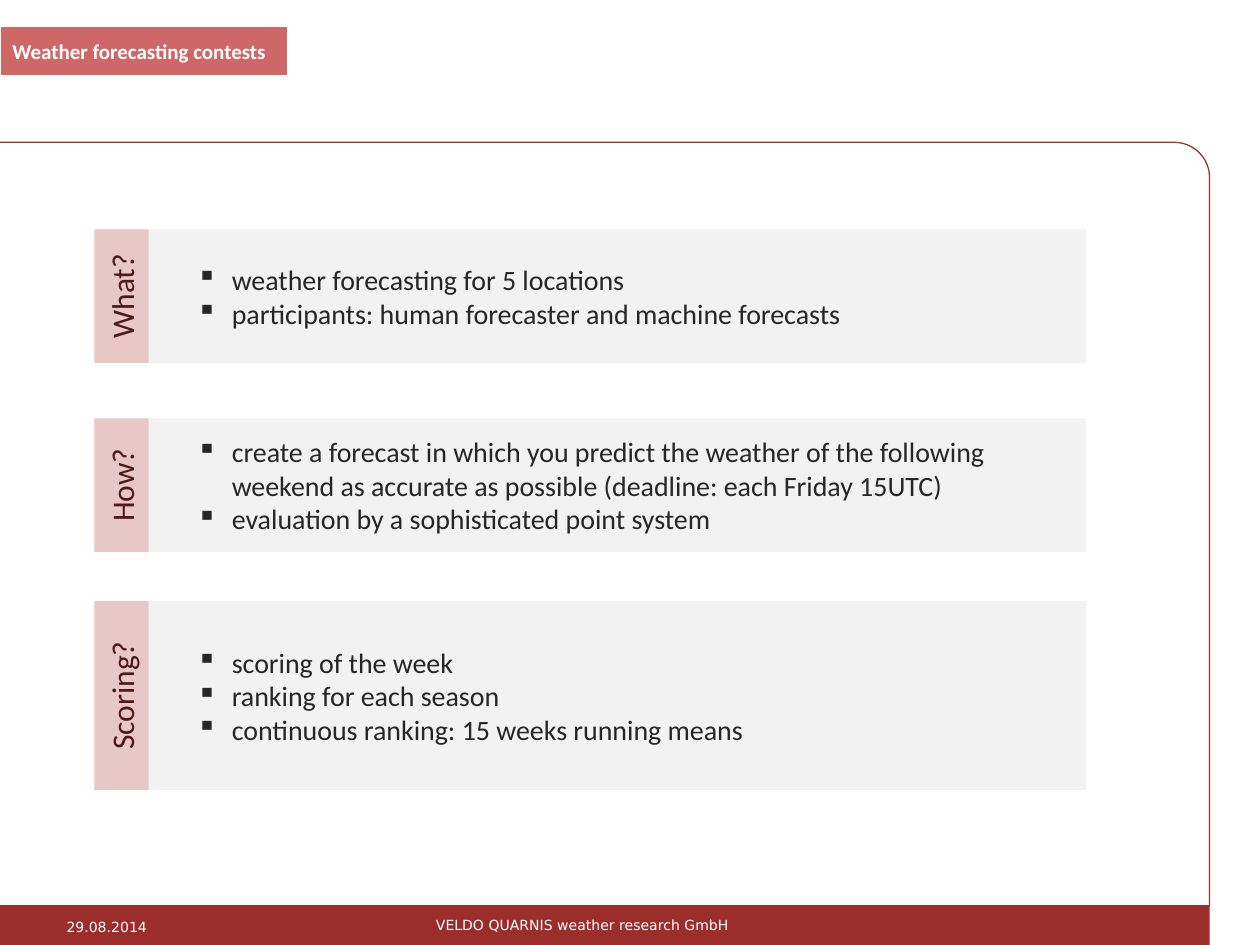
import math
from lxml import etree
from pptx import Presentation, util as u
from pptx.dml.color import RGBColor
from pptx.enum import shapes, text
from pptx.oxml import ns

# Content
TITLE = "Weather forecasting contests"
DATE = "29.08.2014"
FOOTER = "VELDO QUARNIS weather research GmbH"
SECTIONS = [  # label, top, height, bullets
    ("What?", 1.82, 1.06, [
        "weather forecasting for 5 locations",
        "participants: human forecaster and machine forecasts"]),
    ("How?", 3.32, 1.06, [
        "create a forecast in which you predict the weather of the following "
        "weekend as accurate as possible (deadline: each Friday 15UTC)",
        "evaluation by a sophisticated point system"]),
    ("Scoring?", 4.77, 1.5, [
        "scoring of the week",
        "ranking for each season",
        "continuous ranking: 15 weeks running means"]),
]

THEME = {
    "font": "Calibri", "footer_font": "DejaVu Sans",
    "body": 16, "label": 18, "title": 12, "footer": 8,
    "ink": "262626", "label_ink": "4E1919", "white": "FFFFFF",
    "panel": "F2F2F2", "tab": "DD9797", "tab_opacity": 47,
    "title_fill": "CE6868", "bar": "9B2D2A", "frame": "9D3232",
}

# Layout in inches
WIDTH, HEIGHT = 10, 7.5
FRAME_LEFT, FRAME_TOP, FRAME_RIGHT = -0.01, 1.13, 9.6
BAR_TOP = 7.19
CORNER, CORNER_STEPS = 0.28, 12
PANEL_LEFT, PANEL_WIDTH, TAB_WIDTH = 0.75, 7.87, 0.43


def color(name):
    return RGBColor.from_string(THEME[name])


def add_box(page, left, top, width, height, fill, line=None):
    box = page.shapes.add_shape(shapes.MSO_SHAPE.RECTANGLE,
                                *map(u.Inches, (left, top, width, height)))
    box.shadow.inherit = False
    box.fill.solid()
    box.fill.fore_color.rgb = color(fill)
    if line:
        box.line.color.rgb = color(line)
        box.line.width = u.Pt(0.75)
    else:
        box.line.fill.background()
    return box


def write(box, lines, size, ink, font="font", bold=False, align="LEFT",
          anchor="MIDDLE", inset=0.1):
    frame = box.text_frame
    frame.word_wrap = True
    frame.vertical_anchor = getattr(text.MSO_ANCHOR, anchor)
    frame.margin_left = u.Inches(inset)
    frame.text = "\n".join(lines)
    for para in frame.paragraphs:
        para.alignment = getattr(text.PP_ALIGN, align)
        for span in para.runs:
            span.font.name = THEME[font]
            span.font.size = u.Pt(THEME[size])
            span.font.bold = bold
            span.font.color.rgb = color(ink)


def add_bullet(para):
    props = para._p.get_or_add_pPr()
    props.set("marL", str(u.Inches(0.5)))
    props.set("indent", str(u.Inches(-0.28)))
    tint = etree.SubElement(props, ns.qn("a:buClr"))
    etree.SubElement(tint, ns.qn("a:srgbClr"), val=THEME["ink"])
    etree.SubElement(props, ns.qn("a:buChar"), char="▪")


def add_frame(page):
    angles = [math.pi / 2 * (1 - step / CORNER_STEPS)
              for step in range(CORNER_STEPS + 1)]
    points = [(FRAME_RIGHT - CORNER + CORNER * math.cos(angle),
               FRAME_TOP + CORNER - CORNER * math.sin(angle))
              for angle in angles]
    points += [(FRAME_RIGHT, BAR_TOP), (FRAME_LEFT, BAR_TOP)]
    builder = page.shapes.build_freeform(u.Inches(FRAME_LEFT), u.Inches(FRAME_TOP))
    builder.add_line_segments([(u.Inches(x), u.Inches(y)) for x, y in points],
                              close=True)
    outline = builder.convert_to_shape()
    outline.shadow.inherit = False
    outline.fill.background()
    outline.line.color.rgb = color("frame")
    outline.line.width = u.Pt(0.75)


def add_section(page, label, top, height, bullets):
    panel = add_box(page, PANEL_LEFT, top, PANEL_WIDTH, height, "panel")
    write(panel, bullets, "body", "ink", inset=0.59)
    for para in panel.text_frame.paragraphs:
        add_bullet(para)
    # The tab is turned about its centre, so its width is the panel's height
    tab = add_box(page, PANEL_LEFT + (TAB_WIDTH - height) / 2,
                  top + (height - TAB_WIDTH) / 2, height, TAB_WIDTH, "tab")
    tab.rotation = 270
    tint = tab._element.spPr.find(ns.qn("a:solidFill"))[0]
    etree.SubElement(tint, ns.qn("a:alpha"), val=str(THEME["tab_opacity"] * 1000))
    write(tab, [label], "label", "label_ink", align="CENTER")


def add_footer(page, words, left, top, width, height, **style):
    box = page.shapes.add_textbox(*map(u.Inches, (left, top, width, height)))
    write(box, [words], "footer", "white", "footer_font", **style)


def main():
    deck = Presentation()
    deck.slide_width, deck.slide_height = u.Inches(WIDTH), u.Inches(HEIGHT)
    page = deck.slides.add_slide(deck.slide_layouts[6])

    # Frame and bottom bar
    add_frame(page)
    add_box(page, 0, BAR_TOP, FRAME_RIGHT, HEIGHT - BAR_TOP, "bar")

    # Question panels
    for section in SECTIONS:
        add_section(page, *section)

    # Title tag and footer
    tag = add_box(page, 0, 0.21, 2.28, 0.39, "title_fill", "white")
    write(tag, [TITLE], "title", "white", bold=True)
    add_footer(page, FOOTER, 3.46, 7.18, 2.48, 0.32, inset=0)
    add_footer(page, DATE, 0.43, 7.24, 0.86, 0.24, anchor="TOP")

    deck.save("out.pptx")


if __name__ == "__main__":
    main()
